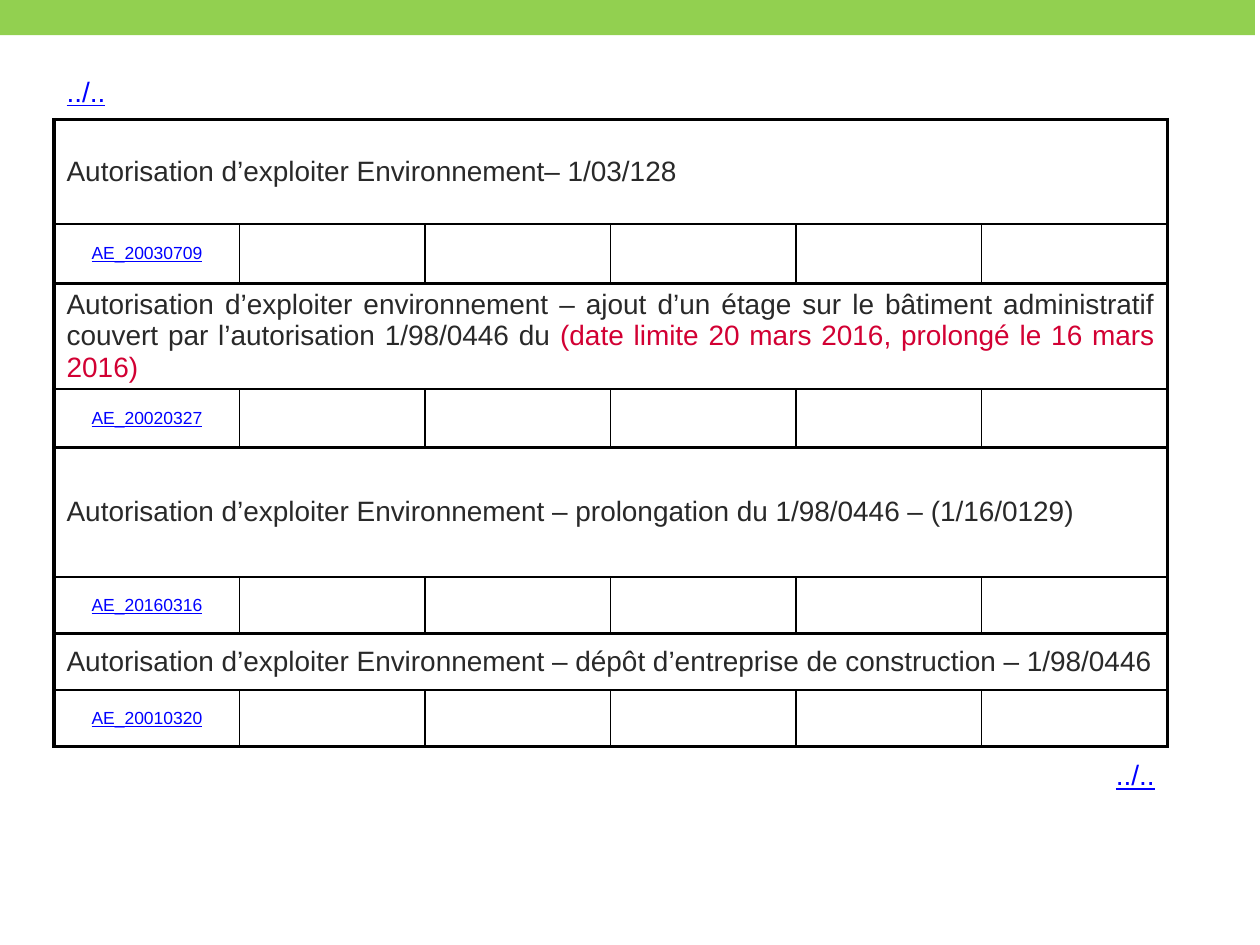
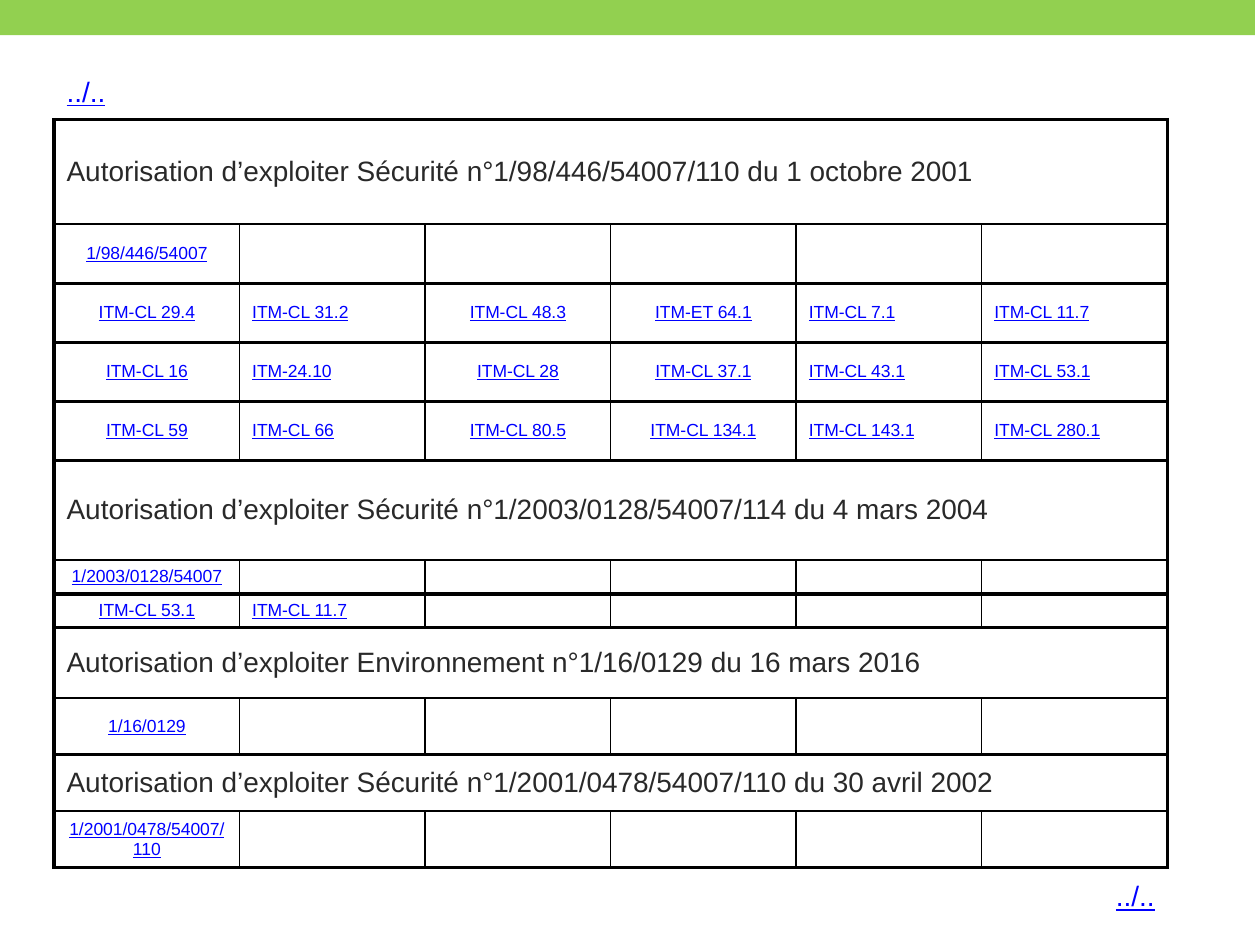
from lxml.etree import SubElement
from pptx import Presentation
from pptx.dml.color import RGBColor
from pptx.enum.shapes import MSO_SHAPE as Shape
from pptx.enum.text import MSO_ANCHOR as Anchor, PP_ALIGN as Align
from pptx.oxml.ns import qn
from pptx.util import Cm, Pt

COLORS = {"band": "92D050", "text": "292929", "link": "0000FF", "alert": "D20033", "border": "000000"}
FONT = "Arial"
HEAD_SIZE, LINK_SIZE = 16, 10
THICK, THIN = 2.25, 1
NO_STYLE_NO_GRID = "{2D5ABB26-0587-4C30-8999-92F81FD0307C}"

COLUMN_ALIGNS = [Align.CENTER, Align.LEFT, Align.CENTER, Align.CENTER, Align.LEFT, Align.LEFT]
TABLE_LEFT, TABLE_TOP, COLUMN_WIDTH = 1.09, 1.32, 3.74
NAV_TEXT, NAV_TOP_HEIGHT, NAV_BOTTOM_HEIGHT = "../..", 1.09, 1.19

ENVIRONMENT_PERMITS = [
    ("head", 2.11, Align.LEFT, [("Autorisation d’exploiter Environnement– 1/03/128", "text")]),
    ("links", 1.19, ["AE_20030709"]),
    ("head", 2.13, Align.JUSTIFY, [
        ("Autorisation d’exploiter environnement – ajout d’un étage sur le bâtiment "
         "administratif couvert par l’autorisation 1/98/0446 du ", "text"),
        ("(date limite 20 mars 2016, prolongé le 16 mars 2016)", "alert"),
    ]),
    ("links", 1.17, ["AE_20020327"]),
    ("head", 2.62, Align.LEFT, [
        ("Autorisation d’exploiter Environnement – prolongation du 1/98/0446 – (1/16/0129)", "text")]),
    ("links", 1.14, ["AE_20160316"]),
    ("head", 1.14, Align.LEFT, [
        ("Autorisation d’exploiter Environnement – dépôt d’entreprise de construction – 1/98/0446", "text")]),
    ("links", 1.14, ["AE_20010320"]),
]

SAFETY_PERMITS = [
    ("head", 2.11, Align.LEFT, [
        ("Autorisation d’exploiter Sécurité n°1/98/446/54007/110 du 1 octobre 2001", "text")]),
    ("links", 1.19, ["1/98/446/54007"]),
    ("links", 1.19, ["ITM-CL 29.4", "ITM-CL 31.2", "ITM-CL 48.3", "ITM-ET 64.1", "ITM-CL 7.1", "ITM-CL 11.7"]),
    ("links", 1.19, ["ITM-CL 16", "ITM-24.10", "ITM-CL 28", "ITM-CL 37.1", "ITM-CL 43.1", "ITM-CL 53.1"]),
    ("links", 1.19, ["ITM-CL 59", "ITM-CL 66", "ITM-CL 80.5", "ITM-CL 134.1", "ITM-CL 143.1", "ITM-CL 280.1"]),
    ("head", 2.01, Align.JUSTIFY, [
        ("Autorisation d’exploiter Sécurité n°1/2003/0128/54007/114 du 4 mars 2004", "text")]),
    ("links", 0.64, ["1/2003/0128/54007"]),
    ("links", 0.64, ["ITM-CL 53.1", "ITM-CL 11.7"]),
    ("head", 1.42, Align.LEFT, [
        ("Autorisation d’exploiter Environnement n°1/16/0129 du 16 mars 2016", "text")]),
    ("links", 1.14, ["1/16/0129"]),
    ("head", 1.14, Align.LEFT, [
        ("Autorisation d’exploiter Sécurité n°1/2001/0478/54007/110 du 30 avril 2002", "text")]),
    ("links", 1.14, ["1/2001/0478/54007/110"]),
]


def color(name):
    return RGBColor.from_string(COLORS[name])


def write_cell(cell, runs, size, align):
    para = cell.text_frame.paragraphs[0]
    para.alignment = align
    for text, tone in runs:
        span = para.add_run()
        span.text = text
        span.font.name = FONT
        span.font.size = Pt(size)
        span.font.underline = tone == "link"
        span.font.color.rgb = color(tone)


def set_borders(cell, left, right, top, bottom):
    properties = cell._tc.get_or_add_tcPr()
    sides = {"a:lnL": left, "a:lnR": right, "a:lnT": top, "a:lnB": bottom}
    for position, (tag, width) in enumerate(sides.items()):
        line = SubElement(properties, qn(tag), w=str(Pt(width)))
        properties.insert(position, line)
        fill = SubElement(line, qn("a:solidFill"))
        SubElement(fill, qn("a:srgbClr"), val=COLORS["border"])


def add_band(deck, page):
    band = page.shapes.add_shape(Shape.RECTANGLE, 0, 0, Cm(25.3), Cm(0.71))
    band.shadow.inherit = False
    band.fill.solid()
    band.fill.fore_color.rgb = color("band")
    band.line.fill.background()
    deck.slide_master.shapes.element.insert(2, band.element)


def add_permit_table(page, permits):
    heights = [NAV_TOP_HEIGHT] + [permit[1] for permit in permits] + [NAV_BOTTOM_HEIGHT]
    count = len(COLUMN_ALIGNS)
    frame = page.shapes.add_table(len(heights), count, Cm(TABLE_LEFT), Cm(TABLE_TOP),
                                  Cm(COLUMN_WIDTH * count), Cm(sum(heights)))
    table = frame.table
    table.first_row = table.horz_banding = False
    table._tbl.tblPr.find(qn("a:tableStyleId")).text = NO_STYLE_NO_GRID
    for column in table.columns:
        column.width = Cm(COLUMN_WIDTH)
    for row, height in zip(table.rows, heights):
        row.height = Cm(height)
    for cell in table.iter_cells():
        cell.fill.background()
        cell.vertical_anchor = Anchor.MIDDLE

    last = count - 1
    above = None
    for index, (kind, _, *content) in enumerate(permits, start=1):
        is_head = kind == "head"
        top = THIN if above == "head" else THICK
        bottom = THIN if is_head else THICK
        for column in range(count):
            left = THICK if column == 0 else THIN
            right = THICK if column == last else THIN
            if is_head:
                left = right = THICK
            set_borders(table.cell(index, column), left, right, top, bottom)
        if is_head:
            align, runs = content
            table.cell(index, 0).merge(table.cell(index, last))
            write_cell(table.cell(index, 0), runs, HEAD_SIZE, align)
        else:
            for column, text in enumerate(content[0]):
                write_cell(table.cell(index, column), [(text, "link")], LINK_SIZE, COLUMN_ALIGNS[column])
        above = kind

    nav = [(NAV_TEXT, "link")]
    write_cell(table.cell(0, 0), nav, HEAD_SIZE, Align.LEFT)
    write_cell(table.cell(len(heights) - 1, last), nav, HEAD_SIZE, Align.RIGHT)
    for cell in table.iter_cells():
        if not cell.text:
            para = cell.text_frame.paragraphs[0]
            SubElement(para._p, qn("a:endParaRPr"), sz=str(LINK_SIZE * 100))


def main():
    deck = Presentation()
    deck.slide_width, deck.slide_height = Cm(25.4), Cm(19.05)
    blank = deck.slide_layouts[6]
    pages = [deck.slides.add_slide(blank) for _ in range(2)]
    add_band(deck, pages[0])
    for page, permits in zip(pages, [ENVIRONMENT_PERMITS, SAFETY_PERMITS]):
        add_permit_table(page, permits)
    deck.save("out.pptx")


if __name__ == "__main__":
    main()
